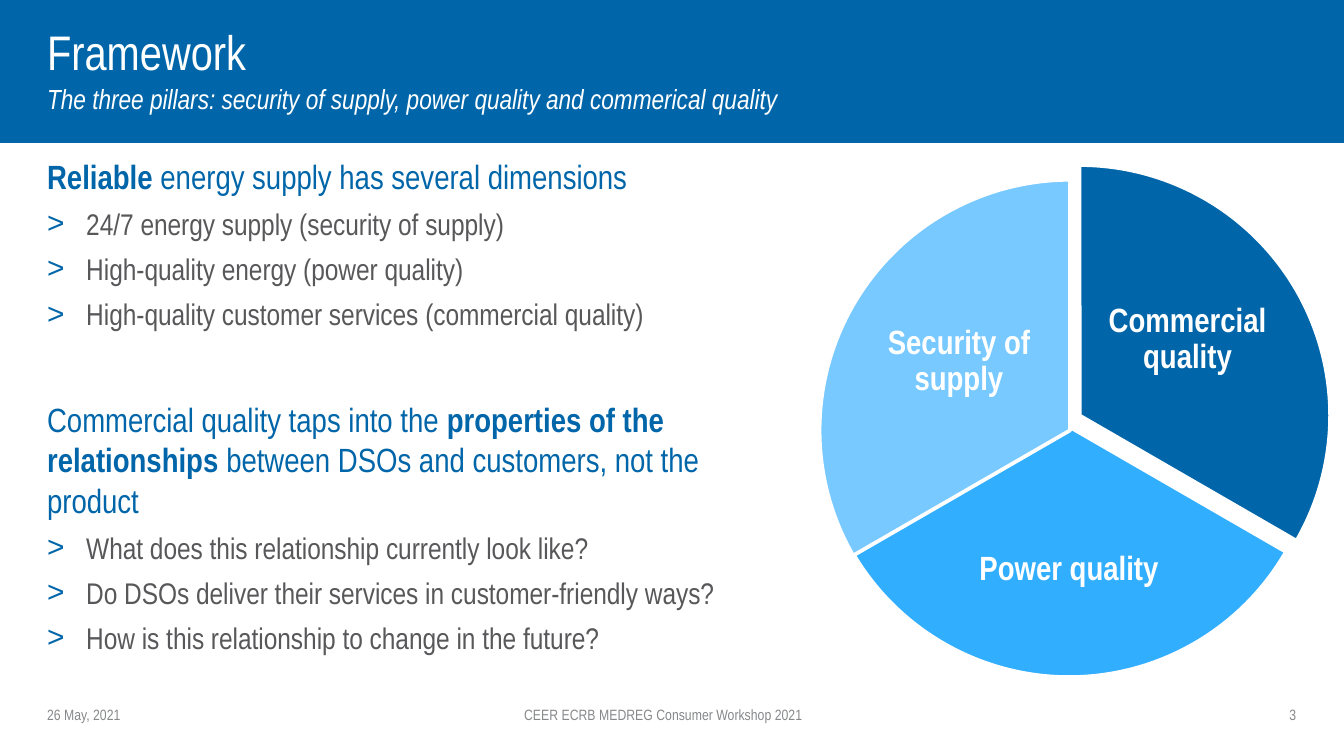
from lxml import etree
from pptx import Presentation
from pptx.dml.color import RGBColor
from pptx.enum.shapes import MSO_SHAPE
from pptx.enum.text import MSO_ANCHOR, MSO_AUTO_SIZE, PP_ALIGN
from pptx.oxml.ns import qn
from pptx.util import Cm, Pt

RECTANGLE, PIE = MSO_SHAPE.RECTANGLE, MSO_SHAPE.PIE
TOP, MIDDLE = MSO_ANCHOR.TOP, MSO_ANCHOR.MIDDLE
LEFT, CENTER, RIGHT = PP_ALIGN.LEFT, PP_ALIGN.CENTER, PP_ALIGN.RIGHT
NO_AUTOFIT = MSO_AUTO_SIZE.NONE

COLORS = {
    "blue": "0066A9",
    "bright": "32AEFF",
    "light": "77C9FF",
    "text": "58585A",
    "footer": "87888A",
    "white": "FFFFFF",
}
MARGIN = 0.89
INDENT = 0.74
PIE_SIZE = 9.47


class SlideBuilder:
    font_name = "Arial Narrow"

    def __init__(self, slide):
        self.slide = slide

    def color(self, name):
        return RGBColor.from_string(COLORS[name])

    def place(self, shape, box):
        shape.left, shape.top, shape.width, shape.height = map(Cm, box)

    def frame(self, shape, anchor, inset=0, bottom=0):
        text_frame = shape.text_frame
        text_frame.word_wrap = True
        text_frame.auto_size = NO_AUTOFIT
        text_frame.vertical_anchor = anchor
        text_frame.margin_left = text_frame.margin_right = Cm(inset)
        text_frame.margin_top = Cm(inset)
        text_frame.margin_bottom = Cm(inset + bottom)
        return text_frame

    def format_runs(self, paragraph, size, color, bold=False, italic=False):
        for run in paragraph.runs:
            run.font.name = self.font_name
            run.font.size = Pt(size)
            run.font.bold = bold
            run.font.italic = italic
            run.font.color.rgb = self.color(color)

    def set_bullet(self, paragraph, character=None):
        properties = paragraph._p.get_or_add_pPr()
        indent = Cm(INDENT) if character else 0
        properties.set("marL", str(indent))
        properties.set("indent", str(-indent))
        if not character:
            etree.SubElement(properties, qn("a:buNone"))
            return
        bullet_color = etree.SubElement(properties, qn("a:buClr"))
        etree.SubElement(bullet_color, qn("a:srgbClr"), val=COLORS["blue"])
        etree.SubElement(properties, qn("a:buChar"), char=character)

    def shape(self, shapes, kind, box, fill, line, line_width):
        shape = shapes.add_shape(kind, *map(Cm, box))
        shape.shadow.inherit = False
        shape.fill.solid()
        shape.fill.fore_color.rgb = self.color(fill)
        shape.line.color.rgb = self.color(line)
        shape.line.width = Pt(line_width)
        return shape

    def band(self, box):
        band = self.shape(self.slide.shapes, RECTANGLE, box, "blue", "blue", 1)
        # Send the band behind the placeholders
        self.slide.shapes._spTree.insert(2, band._element)

    def heading(self, placeholder, box, text, size, italic=False, bottom=0):
        self.place(placeholder, box)
        text_frame = self.frame(placeholder, MIDDLE, bottom=bottom)
        text_frame.text = text
        paragraph = text_frame.paragraphs[0]
        self.set_bullet(paragraph)
        paragraph.alignment = LEFT
        paragraph.space_before = Pt(0)
        self.format_runs(paragraph, size, "white", italic=italic)

    def sections(self, placeholder, box, sections):
        self.place(placeholder, box)
        text_frame = self.frame(placeholder, TOP)
        for number, (parts, items) in enumerate(sections):
            paragraph = text_frame.add_paragraph() if number else text_frame.paragraphs[0]
            self.set_bullet(paragraph)
            paragraph.space_before = Pt(36 if number else 0)
            for text, _ in parts:
                paragraph.add_run().text = text
            self.format_runs(paragraph, 18, "blue")
            for run, (_, bold) in zip(paragraph.runs, parts):
                run.font.bold = bold
            for item in items:
                paragraph = text_frame.add_paragraph()
                paragraph.text = item
                paragraph.level = 1
                self.set_bullet(paragraph, ">")
                paragraph.space_before = Pt(5)
                self.format_runs(paragraph, 16, "text")

    def label(self, shapes, box, text, size, color, alignment, bold=False, inset=0):
        text_box = shapes.add_textbox(*map(Cm, box))
        text_frame = self.frame(text_box, MIDDLE, inset)
        text_frame.text = text
        paragraph = text_frame.paragraphs[0]
        paragraph.alignment = alignment
        self.format_runs(paragraph, size, color, bold)
        return paragraph

    def pie(self, slices):
        shapes = self.slide.shapes.add_group_shape().shapes
        for text, left, top, start, end, fill, label_box in slices:
            box = (left, top, PIE_SIZE, PIE_SIZE)
            wedge = self.shape(shapes, PIE, box, fill, "white", 2)
            # Angles are stored in 60000ths of a degree, adjustments in 100000ths
            wedge.adjustments[0] = start * 0.6
            wedge.adjustments[1] = end * 0.6
            paragraph = self.label(shapes, label_box, text, 18, "white", CENTER, True, 0.08)
            paragraph.line_spacing = 0.9


def main():
    presentation = Presentation()
    presentation.slide_width = Cm(25.4)
    presentation.slide_height = Cm(14.29)
    slide = presentation.slides.add_slide(presentation.slide_layouts[3])
    builder = SlideBuilder(slide)
    title, body, subtitle = slide.placeholders

    # Header
    builder.band((0, 0, 25.4, 2.69))
    builder.heading(title, (MARGIN, 0.53, 18.5, 0.99), "Framework", 26, bottom=0.1)
    builder.heading(
        subtitle, (MARGIN, 1.55, 18.5, 0.61),
        "The three pillars: security of supply, power quality and commerical quality",
        14.8, italic=True)

    # Body text
    builder.sections(body, (MARGIN, 2.95, 14, 10.11), [
        ([("Reliable ", True), ("energy supply has several dimensions", False)],
         ["24/7 energy supply (security of supply)",
          "High-quality energy (power quality)",
          "High-quality customer services (commercial quality)"]),
        ([("Commercial quality taps into the ", False),
          ("properties of the relationships ", True),
          ("between DSOs and customers, not the product", False)],
         ["What does this relationship currently look like?",
          "Do DSOs deliver their services in customer-friendly ways?",
          "How is this relationship to change in the future?"]),
    ])

    # Footer
    for text, left, width, alignment in [
        ("26 May, 2021", MARGIN, 3, LEFT),
        ("CEER ECRB MEDREG Consumer Workshop 2021", 5.54, 14, CENTER),
        ("3", 21.5, 3, RIGHT),
    ]:
        builder.label(slide.shapes, (left, 13.26, width, 0.51), text, 8, "footer", alignment)

    # Three pillars: label, left, top, start angle, end angle, fill, label box
    builder.pie([
        ("Commercial quality", 15.67, 3.12, 270, 30, "blue", (20.83, 4.85, 3.23, 3.15)),
        ("Power quality", 15.47, 3.33, 30, 150, "bright", (18.06, 9.3, 4.29, 2.95)),
        ("Security of supply", 15.49, 3.4, 150, 270, "light", (16.51, 5.26, 3.23, 3.15)),
    ])

    presentation.save("out.pptx")


if __name__ == "__main__":
    main()
